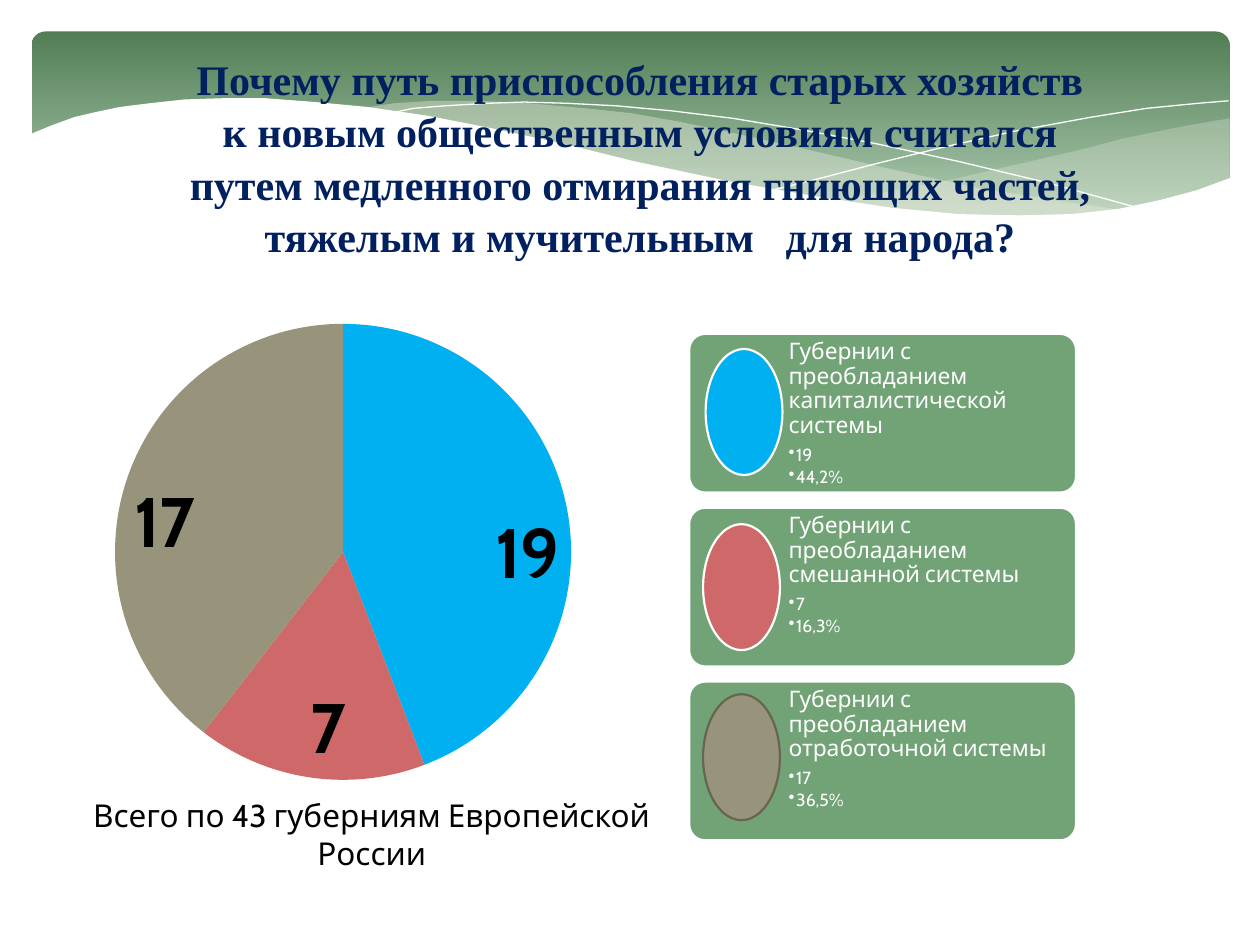
from lxml.etree import SubElement
from pptx import Presentation
from pptx.chart.data import CategoryChartData
from pptx.dml.color import RGBColor
from pptx.enum.chart import XL_CHART_TYPE, XL_LABEL_POSITION
from pptx.enum.shapes import MSO_SHAPE
from pptx.enum.text import PP_ALIGN
from pptx.oxml import parse_xml
from pptx.oxml.ns import nsdecls, qn
from pptx.util import Inches, Pt

HUES = {
    "white": "FFFFFF", "black": "000000", "navy": "002060", "card": "72A376",
    "dark": "527E56", "pale": "AAC8AD", "mist": "EAEBDE",
    "blue": "00B0F0", "red": "CF6868", "tan": "98947C", "rim": "676451",
}
FACE = "Cabin"
VALUES = (19, 7, 17)
SLICES = ("blue", "red", "tan")
CARDS = (
    ("капиталистической", "44,2%", (0.13, 0.12), "white"),
    ("смешанной", "16,3%", (0.11, 0.13), "white"),
    ("отработочной", "36,5%", (0.11, 0.1), "rim"),
)
RIGHT = (
    (9.5, 0.69), (9.1, 0.76), (8.66, 0.85), (8.36, 0.93), (7.8, 1.06), (7.28, 1.18),
    (6.81, 1.27), (6.36, 1.35), (6.66, 1.39), (7.07, 1.43), (7.44, 1.46), (7.78, 1.47),
    (8.1, 1.47), (8.38, 1.45), (8.64, 1.41), (8.88, 1.37), (9.1, 1.31), (9.38, 1.22),
    (9.51, 1.16), (9.51, 0.69),
)
MIDDLE = (
    (8.68, 1.42), (8.12, 1.34), (7.5, 1.24), (6.81, 1.09), (6.04, 0.91), (5.59, 0.81),
    (5.16, 0.72), (4.77, 0.65), (4.4, 0.61), (3.95, 0.57), (3.55, 0.55), (3.19, 0.55),
    (2.88, 0.57), (2.61, 0.61), (2.98, 0.65), (3.37, 0.72), (3.79, 0.81), (4.24, 0.91),
    (5.05, 1.1), (5.59, 1.21), (6.09, 1.31), (6.55, 1.38), (6.97, 1.43), (7.36, 1.46),
    (7.71, 1.48), (8.03, 1.48), (8.32, 1.46),
)
FALL = (
    (2.84, 0.65), (3.03, 0.61), (3.28, 0.59), (3.62, 0.57), (3.91, 0.56), (4.25, 0.57),
    (4.64, 0.59), (5.08, 0.63), (5.57, 0.69), (6.11, 0.78), (6.7, 0.89), (7.35, 1.03),
    (8.06, 1.2), (8.82, 1.41),
)
RISE = (
    (5.88, 1.26), (6.28, 1.16), (6.7, 1.05), (7.23, 0.92), (7.81, 0.79), (8.41, 0.68),
    (8.85, 0.61), (9.26, 0.57), (9.5, 0.55),
)
FRONT = (
    (9.52, 1.16), (9.25, 1.26), (8.95, 1.34), (8.62, 1.41), (8.25, 1.45), (7.84, 1.46),
    (7.36, 1.45), (6.83, 1.4), (6.23, 1.31), (5.54, 1.19), (4.78, 1.03), (4.22, 0.89),
    (3.66, 0.77), (3.15, 0.67), (2.67, 0.6), (2.25, 0.56), (1.86, 0.53), (1.52, 0.53),
    (1.21, 0.54), (0.94, 0.57), (0.7, 0.6), (0.51, 0.64), (0.34, 0.68), (0.15, 0.75),
    (-0.02, 0.82), (-0.02, 1.99), (9.52, 1.99),
)


def hue(name):
    """Return the named colour."""
    return RGBColor.from_string(HUES[name])


def style(font, size, color, face=FACE, bold=False):
    """Set size, colour, face and weight of a font."""
    font.size, font.name, font.bold = Pt(size), face, bold
    font.color.rgb = hue(color)


def add_form(slide, kind, box, fill, rim=None, round_by=None):
    """Add a preset shape with a fill and an optional rim."""
    form = slide.shapes.add_shape(kind, *map(Inches, box))
    form.shadow.inherit = False
    form.fill.solid()
    form.fill.fore_color.rgb = hue(fill)
    if rim:
        form.line.color.rgb = hue(rim)
        form.line.width = Pt(1.25)
    else:
        form.line.fill.background()
    if round_by:
        form.adjustments[0] = round_by
    return form


def add_wave(slide, box, points, fill=None, alpha=100):
    """Add a filled wave, or an open white hairline when no fill is given."""
    spots = [(Inches(box[0] + x), Inches(box[1] + y)) for x, y in points]
    pen = slide.shapes.build_freeform(*spots[0])
    pen.add_line_segments(spots[1:], close=bool(fill))
    wave = pen.convert_to_shape()
    wave.shadow.inherit = False
    if fill:
        wave.fill.solid()
        wave.fill.fore_color.rgb = hue(fill)
        tint = wave.fill._xPr.find(".//" + qn("a:srgbClr"))
        SubElement(tint, qn("a:alpha"), val=str(alpha * 1000))
        wave.line.fill.background()
    else:
        wave.fill.background()
        wave.line.color.rgb = hue("white")
        wave.line.width = Pt(0)


def add_banner(slide, box):
    """Draw the green banner and its waves."""
    panel = add_form(slide, MSO_SHAPE.ROUNDED_RECTANGLE, box, "dark", round_by=0.071)
    panel.fill.gradient()
    panel.fill.gradient_angle = 270
    for stop, place, name in zip(panel.fill.gradient_stops, (0, 0.9), ("dark", "pale")):
        stop.position = place
        stop.color.rgb = hue(name)
    add_wave(slide, box, RIGHT, "mist", 29)
    add_wave(slide, box, MIDDLE, "mist", 40)
    add_wave(slide, box, FALL)
    add_wave(slide, box, RISE)
    add_wave(slide, box, FRONT, "white")


def add_label(slide, box, text, *look):
    """Add a centred paragraph in a wrapping text box."""
    frame = slide.shapes.add_textbox(*map(Inches, box)).text_frame
    frame.word_wrap = True
    para = frame.paragraphs[0]
    para.text, para.alignment = text, PP_ALIGN.CENTER
    style(para.font, *look)
    return para


def add_pie(slide, box):
    """Add the pie of provinces."""
    data = CategoryChartData()
    data.categories = ["1", "2", "3"]
    data.add_series("Series 1", VALUES)
    chart = slide.shapes.add_chart(XL_CHART_TYPE.PIE, *map(Inches, box), data).chart
    chart.has_legend = chart.has_title = False
    style(chart.font, 18, "black")
    plot = chart.plots[0]
    plot.vary_by_categories = True
    for spot, name in enumerate(SLICES):
        fill = plot.series[0].points[spot].format.fill
        fill.solid()
        fill.fore_color.rgb = hue(name)
    plot.has_data_labels = True
    labels = plot.data_labels
    labels.show_value = True
    labels.position = XL_LABEL_POSITION.INSIDE_END
    style(labels.font, 40, "black", bold=True)
    area = chart._chartSpace.find(".//" + qn("c:plotArea"))
    for old in area.findall(qn("c:layout")):
        area.remove(old)
    sizes = "".join(f'<c:{tag} val="{val}"/>' for tag, val in
                    (("layoutTarget", "inner"), ("xMode", "edge"), ("yMode", "edge"),
                     ("x", 0), ("y", 0), ("w", 0.95), ("h", 1)))
    area.insert(0, parse_xml(f'<c:layout {nsdecls("c")}><c:manualLayout>{sizes}'
                             '</c:manualLayout></c:layout>'))


def add_card(slide, box, kind, count, share, spot, fill, rim):
    """Add a legend card with its heading, two bullets and an oval."""
    left, top, width, height = box
    add_form(slide, MSO_SHAPE.ROUNDED_RECTANGLE, box, "card", "white", 0.1)
    inner = (left + 0.74, top, width - 0.74, height)
    frame = slide.shapes.add_textbox(*map(Inches, inner)).text_frame
    frame.word_wrap = True
    frame.margin_left = frame.margin_right = Inches(0.05)
    frame.text = f"Губернии с преобладанием {kind} системы\n{count}\n{share}"
    for rank, para in enumerate(frame.paragraphs):
        para.line_spacing = 0.9
        para.space_after = Pt(1.5 if rank else 4.5)
        style(para.font, 10 if rank else 13, "white")
        if rank:
            para.level = 1
            props = para._p.get_or_add_pPr()
            props.set("marL", str(Inches(0.06)))
            props.set("indent", str(Inches(-0.06)))
            mark = parse_xml(f'<a:buChar {nsdecls("a")} char="•"/>')
            props.insert_element_before(mark, "a:tabLst", "a:defRPr", "a:extLst")
    oval = (left + spot[0], top + spot[1], 0.61, 1)
    add_form(slide, MSO_SHAPE.OVAL, oval, fill, rim)


def add_cards(slide, box, step):
    """Stack the legend cards downward from the first box."""
    left, top, width, height = box
    for row, (kind, share, spot, rim) in enumerate(CARDS):
        place = (left, top + row * step, width, height)
        add_card(slide, place, kind, VALUES[row], share, spot, SLICES[row], rim)


def main():
    """Build and save the slide."""
    deck = Presentation()
    deck.slide_width, deck.slide_height = Inches(10), Inches(7.5)
    slide = deck.slides.add_slide(deck.slide_layouts[6])
    add_banner(slide, (0.25, 0.25, 9.51, 1.56))
    add_pie(slide, (0.59, 2.57, 4.49, 3.62))
    title = add_label(
        slide, (1.38, 0.36, 7.4, 1.72),
        "Почему путь приспособления старых хозяйств к новым общественным условиям "
        "считался путем медленного отмирания гниющих частей, "
        "тяжелым и мучительным   для народа?",
        24, "navy", "Times New Roman", True)
    title.line_spacing = 1.04
    add_label(slide, (0.35, 6.27, 5.2, 0.4),
              "Всего по 43 губерниям Европейской России", 18, "black")
    add_cards(slide, (5.47, 2.65, 3.07, 1.26), 1.38)
    deck.save("out.pptx")


if __name__ == "__main__":
    main()
